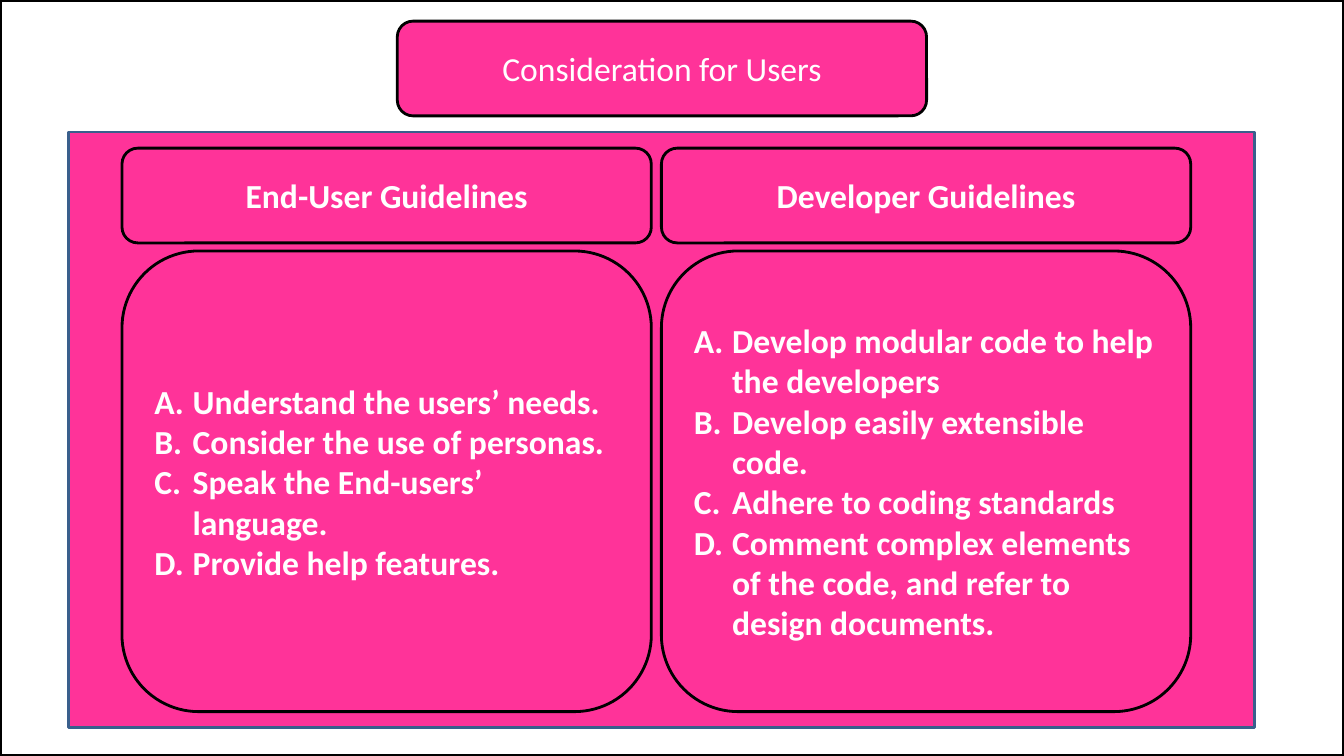
import pptx
import pptx.util
import pptx.dml.color
import pptx.enum.shapes
import pptx.enum.text
import lxml.etree

PX = 9144
WIDTH, HEIGHT = 1333, 750
PINK, BLACK, WHITE, BLUE = "FF3399", "000000", "FFFFFF", "3A5F8C"
RECTANGLE = pptx.enum.shapes.MSO_SHAPE.RECTANGLE
ROUNDED = pptx.enum.shapes.MSO_SHAPE.ROUNDED_RECTANGLE
HEADER_HEIGHT = 94
INDENT = 38

GUIDELINES = [
    ("End-User Guidelines", [
        "Understand the users’ needs.",
        "Consider the use of personas.",
        "Speak the End-users’ language.",
        "Provide help features.",
    ]),
    ("Developer Guidelines", [
        "Develop modular code to help the developers",
        "Develop easily extensible code.",
        "Adhere to coding standards",
        "Comment complex elements of the code, and refer to design documents.",
    ]),
]


def px(length):
    return pptx.util.Emu(length * PX)


def color(value):
    return pptx.dml.color.RGBColor.from_string(value)


def add_box(slide, kind, box, fill=PINK, line=BLACK, line_width=2):
    shape = slide.shapes.add_shape(kind, *[px(length) for length in box])
    shape.shadow.inherit = False
    if fill:
        shape.fill.solid()
        shape.fill.fore_color.rgb = color(fill)
    else:
        shape.fill.background()
    shape.line.color.rgb = color(line)
    shape.line.width = pptx.util.Pt(line_width)
    return shape


def letter_paragraph(paragraph):
    properties = paragraph._p.get_or_add_pPr()
    properties.set("marL", str(px(INDENT)))
    properties.set("indent", str(-px(INDENT)))
    namespace = pptx.oxml.ns.qn("a:buAutoNum")
    lxml.etree.SubElement(properties, namespace, type="alphaUcPeriod")


def write_text(shape, lines, size=24, bold=True, lettered=False):
    frame = shape.text_frame
    frame.word_wrap = True
    frame.vertical_anchor = pptx.enum.text.MSO_ANCHOR.MIDDLE
    alignment = pptx.enum.text.PP_ALIGN
    for index, line in enumerate(lines):
        paragraph = frame.add_paragraph() if index else frame.paragraphs[0]
        paragraph.alignment = alignment.LEFT if lettered else alignment.CENTER
        run = paragraph.add_run()
        run.text = line
        run.font.name = "Calibri"
        run.font.size = pptx.util.Pt(size)
        run.font.bold = bold
        run.font.color.rgb = color(WHITE)
        if lettered:
            letter_paragraph(paragraph)


def add_title(slide, box):
    write_text(add_box(slide, ROUNDED, box), ["Consideration for Users"], bold=False)


def add_column(slide, box, heading, items):
    left, top, width, height = box
    header = add_box(slide, ROUNDED, (left, top, width, HEADER_HEIGHT))
    write_text(header, [heading])
    offset = HEADER_HEIGHT + 8
    body = add_box(slide, ROUNDED, (left, top + offset, width, height - offset))
    write_text(body, items, lettered=True)


def add_board(slide, box):
    left, top, width, height = box
    add_box(slide, RECTANGLE, box, line=BLUE)
    column_width, gap = 525, 10
    for index, (heading, items) in enumerate(GUIDELINES):
        column_left = left + 53 + index * (column_width + gap)
        column = (column_left, top + 16, column_width, height - 32)
        add_column(slide, column, heading, items)


def main():
    presentation = pptx.Presentation()
    presentation.slide_width = px(WIDTH)
    presentation.slide_height = px(HEIGHT)
    slide = presentation.slides.add_slide(presentation.slide_layouts[6])
    add_board(slide, (68, 131, 1176, 591))
    add_title(slide, (394, 21, 525, HEADER_HEIGHT))
    add_box(slide, RECTANGLE, (0, 0, WIDTH, HEIGHT), fill=None, line_width=3)
    presentation.save("out.pptx")


if __name__ == "__main__":
    main()
